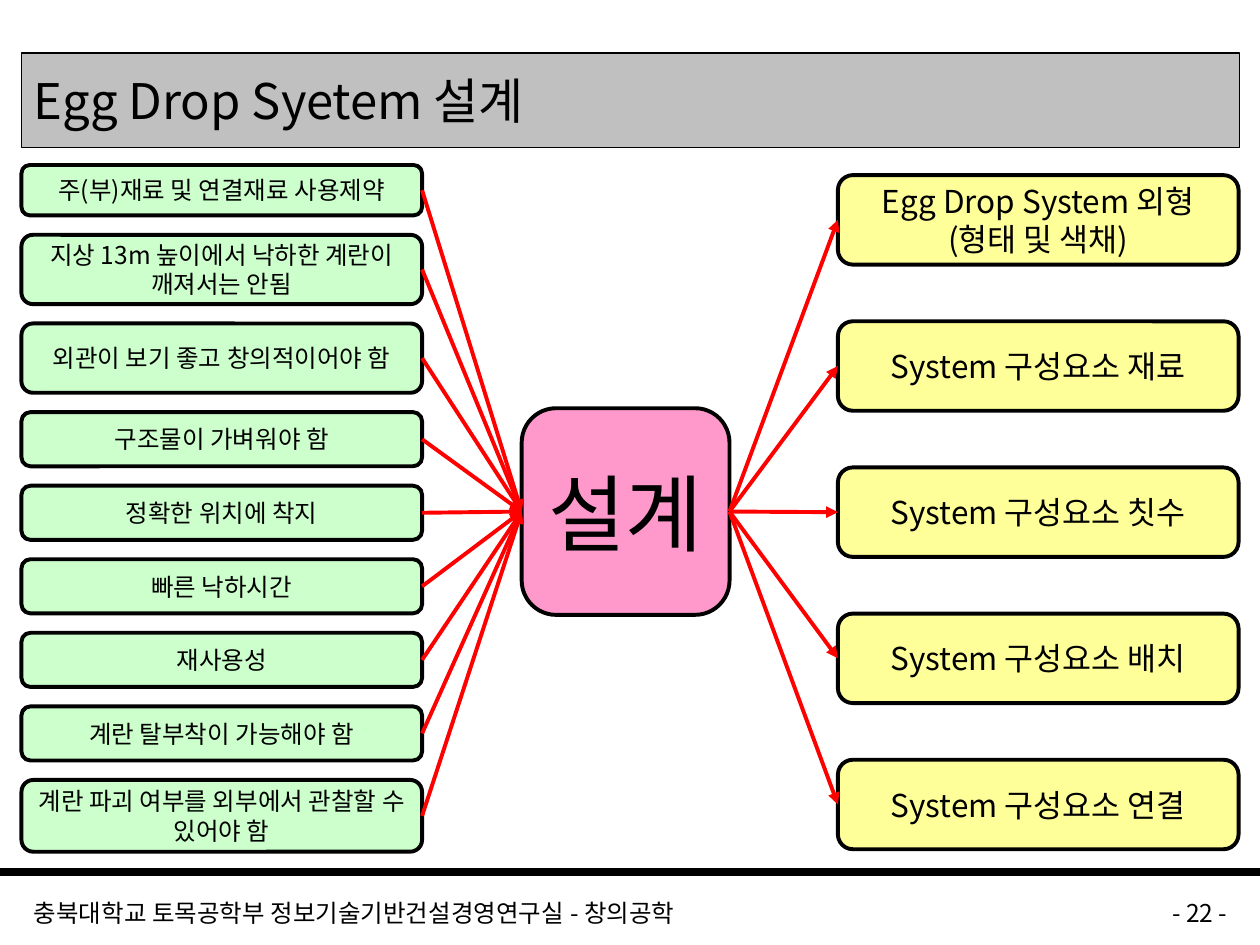
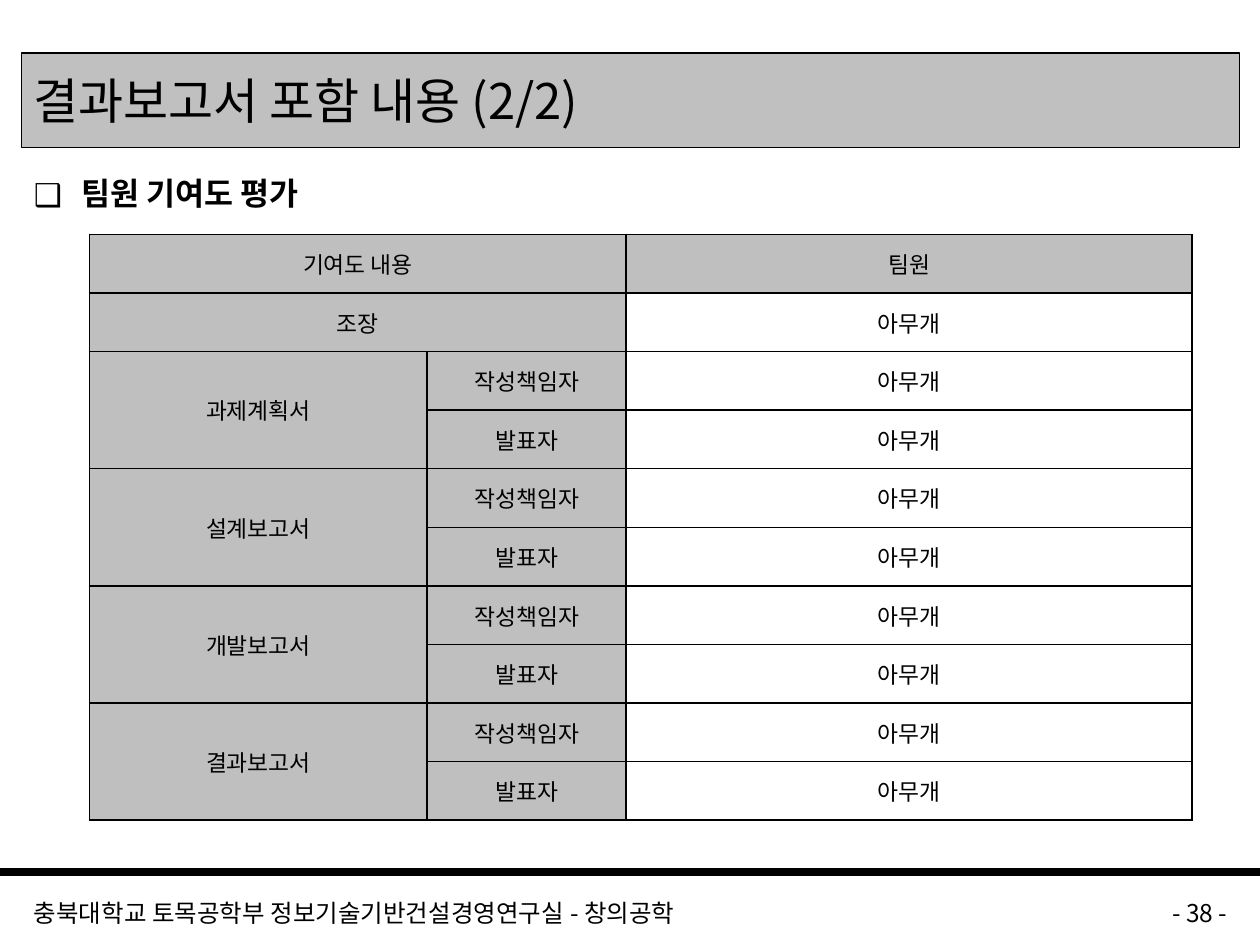
from lxml import etree
from pptx import Presentation
from pptx.dml.color import RGBColor
from pptx.enum.shapes import MSO_CONNECTOR, MSO_SHAPE
from pptx.enum.text import MSO_ANCHOR, PP_ALIGN
from pptx.oxml.ns import qn
from pptx.util import Inches, Pt

LEFT, CENTER, RIGHT = PP_ALIGN.LEFT, PP_ALIGN.CENTER, PP_ALIGN.RIGHT
TOP, MIDDLE = MSO_ANCHOR.TOP, MSO_ANCHOR.MIDDLE
RECT, ROUNDED = MSO_SHAPE.RECTANGLE, MSO_SHAPE.ROUNDED_RECTANGLE
STRAIGHT = MSO_CONNECTOR.STRAIGHT

FONT = "Noto Sans CJK KR"
BLACK, RED, GRAY, HEADER_GRAY = "000000", "FF0000", "C0C0C0", "BFBFBF"
GREEN, YELLOW, PINK, WHITE = "CCFFCC", "FFFF99", "FF99CC", "FFFFFF"
MARGIN, CONTENT_W = 0.17, 9.67
FOOTER = "충북대학교 토목공학부 정보기술기반건설경영연구실 - 창의공학"


def rgb(value):
    return RGBColor.from_string(value)


def write(tf, text, size, align=LEFT, anchor=TOP, bold=False):
    tf.text = text
    tf.word_wrap = True
    tf.vertical_anchor = anchor
    for p in tf.paragraphs:
        p.alignment = align
        for r in p.runs:
            r.font.size = Pt(size)
            r.font.name = FONT
            r.font.bold = bold
            r.font.color.rgb = rgb(BLACK)
            ea = etree.SubElement(r._r.get_or_add_rPr(), qn("a:ea"))
            ea.set("typeface", FONT)


prs = Presentation()
prs.slide_width, prs.slide_height = Inches(10), Inches(7.5)
design = prs.slides.add_slide(prs.slide_layouts[6])
report = prs.slides.add_slide(prs.slide_layouts[6])

boxes = []
lines = []
for slide, title, number in [
    (design, "Egg Drop Syetem 설계", 22),
    (report, "결과보고서 포함 내용 (2/2)", 38),
]:
    boxes.append((slide, RECT, MARGIN, 0.42, CONTENT_W, 0.75, GRAY, 0.75, title, 28, LEFT))
    lines.append((slide, 0, 6.92, 10, 6.92, BLACK, 4.5))
    for x, w, text, align in [
        (MARGIN, 7.83, FOOTER, LEFT),
        (8.17, 1.67, f"- {number} -", RIGHT),
    ]:
        sp = slide.shapes.add_textbox(Inches(x), Inches(7.08), Inches(w), Inches(0.25))
        write(sp.text_frame, text, 14, align)

hub_x, hub_y, hub_w, hub_h = 4.14, 3.24, 1.65, 1.64
hub_mid = hub_y + hub_h / 2
boxes.append((design, ROUNDED, hub_x, hub_y, hub_w, hub_h, PINK, 2.25, "설계", 48, CENTER))

side_w = 3.18
requirements = [
    ("주(부)재료 및 연결재료 사용제약", 0.4),
    ("지상 13m 높이에서 낙하한 계란이 깨져서는 안됨", 0.55),
    ("외관이 보기 좋고 창의적이어야 함", 0.55),
    ("구조물이 가벼워야 함", 0.43),
    ("정확한 위치에 착지", 0.43),
    ("빠른 낙하시간", 0.43),
    ("재사용성", 0.43),
    ("계란 탈부착이 가능해야 함", 0.43),
    ("계란 파괴 여부를 외부에서 관찰할 수 있어야 함", 0.57),
]
y, bottom = 1.31, 6.76
gap = (bottom - y - sum(h for _, h in requirements)) / (len(requirements) - 1)
for text, h in requirements:
    boxes.append((design, ROUNDED, MARGIN, y, side_w, h, GREEN, 2.25, text, 14, CENTER))
    lines.append((design, MARGIN + side_w, y + h / 2, hub_x, hub_mid, RED, 2.25))
    y += h + gap

outputs = [
    "Egg Drop System 외형\n(형태 및 색채)",
    "System 구성요소 재료",
    "System 구성요소 칫수",
    "System 구성요소 배치",
    "System 구성요소 연결",
]
output_x, output_h = 6.65, 0.71
for i, text in enumerate(outputs):
    y = 1.39 + 1.16 * i
    boxes.append((design, ROUNDED, output_x, y, side_w, output_h, YELLOW, 2.25, text, 18, CENTER))
    lines.append((design, hub_x + hub_w, hub_mid, output_x, y + output_h / 2, RED, 2.25))

for slide, kind, x, y, w, h, fill, weight, text, size, align in boxes:
    sp = slide.shapes.add_shape(kind, Inches(x), Inches(y), Inches(w), Inches(h))
    sp.shadow.inherit = False
    sp.fill.solid()
    sp.fill.fore_color.rgb = rgb(fill)
    sp.line.color.rgb = rgb(BLACK)
    sp.line.width = Pt(weight)
    write(sp.text_frame, text, size, align, MIDDLE)

for slide, x1, y1, x2, y2, color, weight in lines:
    line = slide.shapes.add_connector(STRAIGHT, Inches(x1), Inches(y1), Inches(x2), Inches(y2))
    line.line.color.rgb = rgb(color)
    line.line.width = Pt(weight)
    if color == RED:
        etree.SubElement(line.line._get_or_add_ln(), qn("a:tailEnd")).set("type", "triangle")
    etree.SubElement(line._element.spPr, qn("a:effectLst"))

sp = report.shapes.add_textbox(Inches(MARGIN), Inches(1.33), Inches(CONTENT_W), Inches(0.45))
write(sp.text_frame, "팀원 기여도 평가", 18, bold=True)
pPr = sp.text_frame.paragraphs[0]._p.get_or_add_pPr()
pPr.set("marL", str(Inches(0.38)))
pPr.set("indent", str(-Inches(0.38)))
etree.SubElement(pPr, qn("a:buFont")).set("typeface", FONT)
etree.SubElement(pPr, qn("a:buChar")).set("char", "❑")

rows = [("기여도 내용", "", "팀원"), ("조장", "", "아무개")]
for document in ["과제계획서", "설계보고서", "개발보고서", "결과보고서"]:
    rows += [(document, "작성책임자", "아무개"), ("", "발표자", "아무개")]

col_widths = [2.68, 1.58, 4.49]
table = report.shapes.add_table(
    len(rows), 3, Inches(0.71), Inches(1.86), Inches(sum(col_widths)), Inches(4.65)
).table
for column, w in zip(table.columns, col_widths):
    column.width = Inches(w)
for i, row in enumerate(rows):
    for j, text in enumerate(row):
        cell = table.cell(i, j)
        write(cell.text_frame, text, 13, CENTER)
        cell.vertical_anchor = MIDDLE
        tcPr = cell._tc.get_or_add_tcPr()
        for side in ["a:lnL", "a:lnR", "a:lnT", "a:lnB"]:
            ln = etree.SubElement(tcPr, qn(side), w=str(Pt(1)))
            solid = etree.SubElement(ln, qn("a:solidFill"))
            etree.SubElement(solid, qn("a:srgbClr"), val=BLACK)
        cell.fill.solid()
        cell.fill.fore_color.rgb = rgb(HEADER_GRAY if i == 0 or j < 2 else WHITE)
for i in range(2):
    table.cell(i, 0).merge(table.cell(i, 1))
for i in range(2, len(rows), 2):
    table.cell(i, 0).merge(table.cell(i + 1, 0))

prs.save("out.pptx")
